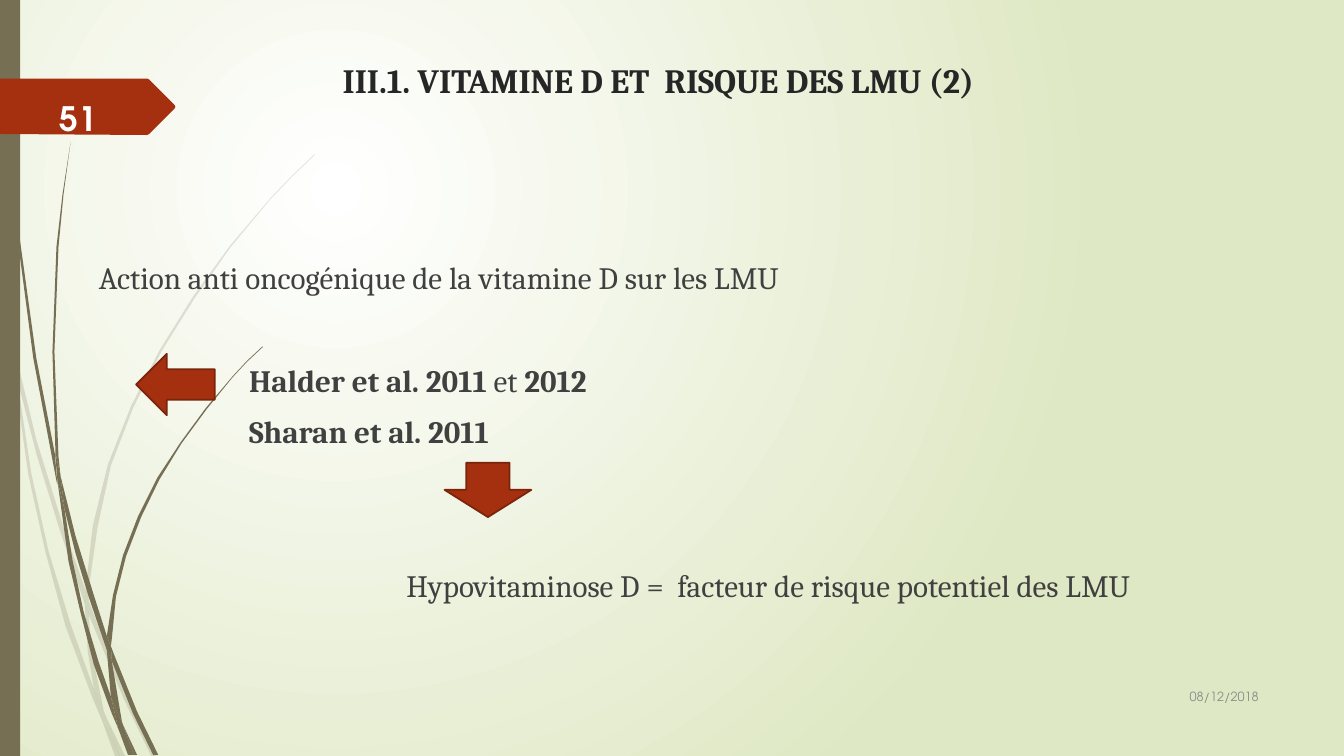
import pptx
import pptx.dml.color
import pptx.enum.shapes
import pptx.enum.text
import pptx.oxml.ns
import pptx.util
from lxml import etree

WIDTH, HEIGHT = 1333, 750
EMU_PER_PX = 9144
COLOURS = {
    "olive": "766F54", "rust": "A53010", "rust_edge": "7A240C",
    "glow": "FFFFFF", "moss": "DFE8C4", "title": "262626",
    "body": "404040", "date": "8C8C8C", "number": "FEFFFF",
}
SHAPES = pptx.enum.shapes.MSO_SHAPE
ALIGN = pptx.enum.text.PP_ALIGN
ANCHOR = pptx.enum.text.MSO_ANCHOR
qn = pptx.oxml.ns.qn

# Outlines of the pieces of grass
PALE_GRASS = [
    [(11, 350), (9, 322), (0, 282), (0, 299), (10, 344)],
    [(58, 522), (84, 599), (85, 586), (62, 520), (36, 436), (14, 345),
     (17, 376), (36, 450)],
    [(92, 607), (88, 596), (88, 610), (123, 694), (150, 750), (155, 750),
     (127, 692)],
    [(119, 750), (124, 750), (105, 711)],
    [(93, 683), (70, 619), (48, 546), (31, 469), (17, 376), (11, 350),
     (28, 470), (45, 547), (65, 621), (92, 693), (101, 714), (99, 707)],
    [(84, 599), (87, 646), (93, 683), (96, 692), (105, 711), (103, 706),
     (91, 646), (88, 610), (88, 608)],
    [(88, 584), (97, 522), (110, 462), (132, 405), (160, 349), (193, 296),
     (229, 245), (268, 198), (290, 175), (312, 154), (312, 153), (289, 175),
     (268, 197), (228, 244), (191, 295), (158, 348), (130, 403), (107, 461),
     (92, 522), (85, 584), (85, 586), (88, 596)],
    [(101, 714), (114, 750), (119, 750)],
    [(88, 608), (88, 610), (88, 596), (85, 586), (84, 599)],
    [(96, 692), (93, 683), (99, 707), (101, 714), (119, 750), (105, 711)],
]
DARK_GRASS = [
    [(7, 110), (17, 233), (33, 355), (56, 477), (57, 481), (55, 457),
     (55, 453), (36, 355), (19, 232), (8, 109), (5, 48), (4, 0), (3, 0),
     (4, 48)],
    [(88, 592), (106, 645), (106, 633), (106, 631), (93, 590), (75, 532),
     (60, 472), (64, 505), (75, 549)],
    [(113, 649), (110, 641), (111, 656), (132, 708), (152, 749), (157, 749),
     (136, 706)],
    [(110, 691), (98, 657), (83, 607), (72, 556), (64, 505), (57, 477),
     (68, 557), (80, 608), (93, 659), (111, 708), (117, 722), (116, 717)],
    [(60, 472), (58, 453), (54, 349), (58, 245), (63, 193), (70, 141),
     (62, 193), (56, 245), (52, 349), (55, 449)],
    [(133, 749), (136, 749), (122, 719)],
    [(57, 477), (64, 505), (60, 472), (55, 449), (55, 453)],
    [(111, 633), (115, 592), (125, 552), (140, 513), (158, 476), (180, 440),
     (205, 406), (231, 374), (245, 359), (261, 344), (260, 344), (245, 358),
     (231, 373), (204, 405), (179, 439), (156, 474), (137, 512), (122, 551),
     (112, 591), (106, 631), (110, 641)],
    [(117, 722), (127, 749), (131, 749)],
    [(106, 645), (110, 691), (116, 706), (122, 719), (121, 716), (111, 656),
     (109, 651)],
    [(106, 645), (109, 651), (111, 656), (110, 641), (106, 631), (106, 633)],
    [(116, 706), (110, 691), (116, 717), (117, 722), (130, 749), (133, 749),
     (122, 719)],
]
NUMBER_TAG = [(0, 78), (146, 78), (148, 79), (173, 104), (174, 106),
              (173, 108), (148, 133), (146, 134), (0, 133)]


def emu(px):
    return pptx.util.Emu(px * EMU_PER_PX)


def rgb(name):
    return pptx.dml.color.RGBColor.from_string(COLOURS[name])


def add_span(para, text, *, size, colour, font="Cambria", bold=False):
    span = para.add_run()
    span.text = text
    span.font.name = font
    span.font.size = pptx.util.Pt(size)
    span.font.bold = bold
    span.font.color.rgb = rgb(colour)


class Canvas:
    """The current page and the way things are drawn on it."""

    def __init__(self, page):
        self.page = page

    def background(self):
        fill = self.page.background.fill
        fill.gradient()
        for stop, name in zip(fill.gradient_stops, ("glow", "moss")):
            stop.color.rgb = rgb(name)
        gradient = next(self.page.element.iter(qn("a:gradFill")))
        gradient.remove(gradient.find(qn("a:lin")))
        circle = etree.SubElement(gradient, qn("a:path"), path="circle")
        etree.SubElement(circle, qn("a:fillToRect"),
                         l="50000", t="50000", r="100000", b="100000")

    def paint(self, shape, fill, edge=None, alpha=None):
        shape.shadow.inherit = False
        shape.fill.solid()
        shape.fill.fore_color.rgb = rgb(fill)
        if alpha:
            colour = next(shape.element.spPr.iter(qn("a:srgbClr")))
            etree.SubElement(colour, qn("a:alpha"), val=str(alpha * 1000))
        if edge:
            shape.line.color.rgb = rgb(edge)
            shape.line.width = pptx.util.Pt(1.25)
        else:
            shape.line.fill.background()

    def shape(self, kind, left, top, width, height, fill, edge=None):
        shape = self.page.shapes.add_shape(
            kind, emu(left), emu(top), emu(width), emu(height))
        self.paint(shape, fill, edge)

    def outline(self, points, fill, alpha=None):
        builder = self.page.shapes.build_freeform(*points[0], scale=EMU_PER_PX)
        builder.add_line_segments(points[1:], close=True)
        self.paint(builder.convert_to_shape(), fill, alpha=alpha)

    def text(self, left, top, width, height, paras, *, inset=(0, 0, 0),
             align=ALIGN.LEFT, anchor=ANCHOR.MIDDLE, **style):
        """Each para is (indent in px, space before in pt, [(text, bold), ...]);
        inset is left, top, right."""
        box = self.page.shapes.add_textbox(
            emu(left), emu(top), emu(width), emu(height))
        frame = box.text_frame
        frame.word_wrap = True
        frame.vertical_anchor = anchor
        frame.margin_left, frame.margin_top, frame.margin_right = map(emu, inset)
        frame.margin_bottom = 0
        for i, (indent, space, spans) in enumerate(paras):
            para = frame.add_paragraph() if i else frame.paragraphs[0]
            para.alignment = align
            para.space_before = pptx.util.Pt(space)
            para._p.get_or_add_pPr().set("marL", str(emu(indent)))
            for words, bold in spans:
                add_span(para, words, bold=bold, **style)


def main():
    deck = pptx.Presentation()
    deck.slide_width, deck.slide_height = emu(WIDTH), emu(HEIGHT)
    canvas = Canvas(deck.slides.add_slide(deck.slide_layouts[6]))

    canvas.background()
    for piece in PALE_GRASS:
        canvas.outline(piece, "olive", alpha=20)
    for piece in DARK_GRASS:
        canvas.outline(piece, "olive")
    canvas.shape(SHAPES.RECTANGLE, 0, 0, 20, HEIGHT, "olive")
    canvas.outline(NUMBER_TAG, "rust")

    canvas.text(78, 0, 1150, 145,
                [(0, 0, [("III.1. VITAMINE D ET  RISQUE DES LMU (2)", True)])],
                inset=(0, 14, 0), align=ALIGN.CENTER, size=24.3, colour="title")
    canvas.text(27, 168, 1306, 481, [
        (0, 0, [("Action anti oncogénique de la vitamine D sur les LMU", False)]),
        (149, 47, [("Halder et al. 2011 ", True), ("et ", False), ("2012", True)]),
        (149, 10, [("Sharan et al. 2011", True)]),
        (305, 83, [("Hypovitaminose D =  facteur de risque potentiel des LMU",
                    False)]),
    ], inset=(71, 88, 0), anchor=ANCHOR.TOP, size=22.2, colour="body")
    canvas.text(1133, 670, 125, 41, [(0, 0, [("08/12/2018", False)])],
                inset=(10, 0, 10), align=ALIGN.RIGHT, size=9, colour="date",
                font="TeX Gyre Adventor")
    canvas.text(-72, 97, 300, 40, [(0, 0, [("51", True)])],
                align=ALIGN.CENTER, size=24, colour="number",
                font="TeX Gyre Adventor")

    canvas.shape(SHAPES.LEFT_ARROW, 135, 351, 78, 61, "rust", "rust_edge")
    canvas.shape(SHAPES.DOWN_ARROW, 441, 459, 86, 54, "rust", "rust_edge")
    deck.save("out.pptx")


if __name__ == "__main__":
    main()
